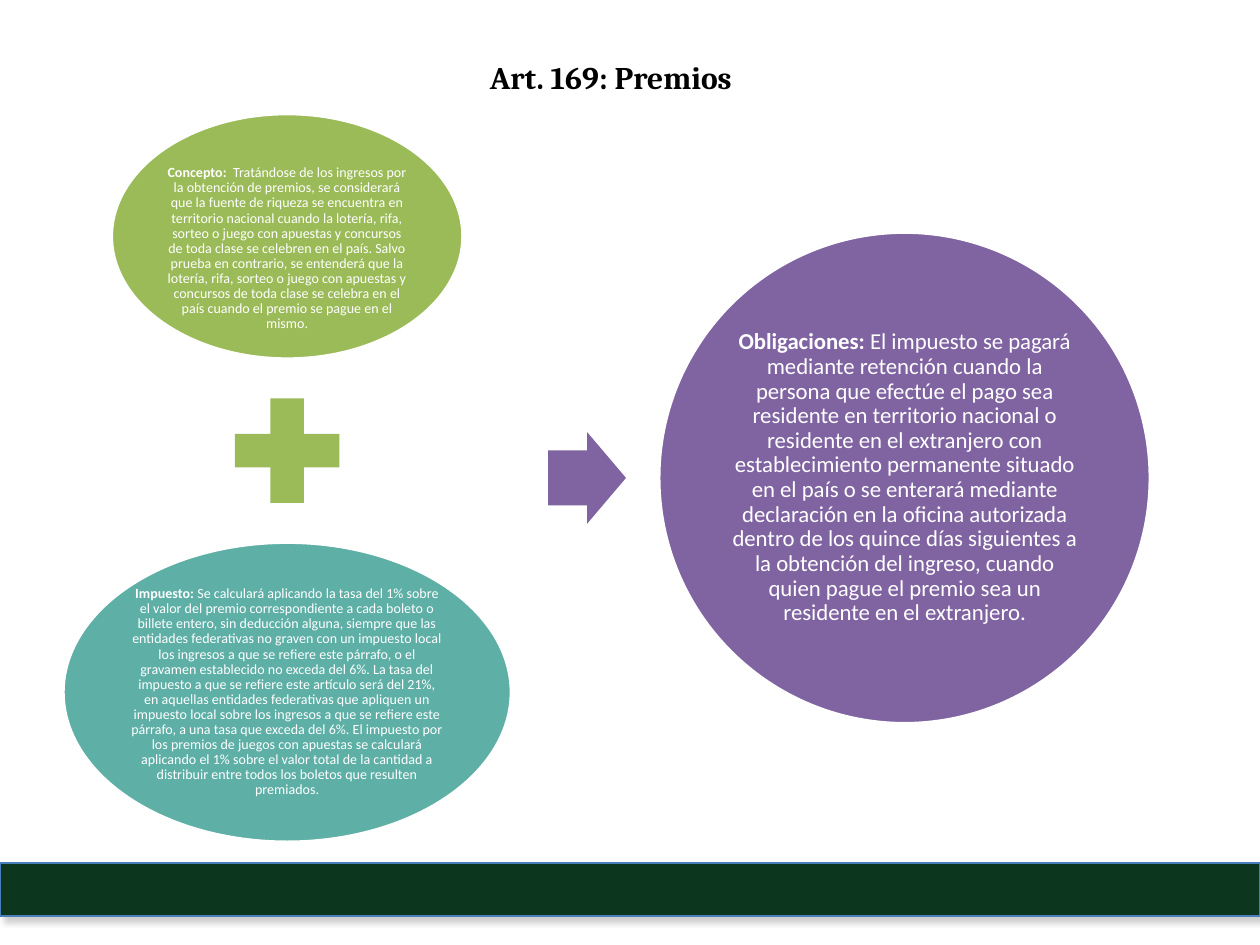
"""Build the slide on the taxation of prizes: two concepts added up lead to the obligations."""
from lxml import etree
from pptx import Presentation
from pptx.dml.color import RGBColor
from pptx.enum.shapes import MSO_SHAPE
from pptx.enum.text import MSO_ANCHOR, PP_ALIGN
from pptx.oxml.ns import qn
from pptx.util import Cm, Pt

OVAL, PLUS = MSO_SHAPE.OVAL, MSO_SHAPE.MATH_PLUS
ARROW, RECTANGLE = MSO_SHAPE.RIGHT_ARROW, MSO_SHAPE.RECTANGLE
MIDDLE, CENTER = MSO_ANCHOR.MIDDLE, PP_ALIGN.CENTER

COLORS = {"green": "9BBB59", "teal": "5EAFA6", "purple": "8064A2", "forest": "0C361D",
          "blue": "4A7EBB", "gray": "808080", "white": "FFFFFF", "black": "000000"}

TITLE = "Art. 169: Premios"
CONCEPT = ("Concepto: ", "\N{NO-BREAK SPACE}Tratándose de los ingresos por la obtención de premios, se "
           "considerará que la fuente de riqueza se encuentra en territorio nacional cuando la lotería, "
           "rifa, sorteo o juego con apuestas y concursos de toda clase se celebren en el país. Salvo "
           "prueba en contrario, se entenderá que la lotería, rifa, sorteo o juego con apuestas y "
           "concursos de toda clase se celebra en el país cuando el premio se pague en el mismo.")
TAX = ("Impuesto: ", "Se calculará aplicando la tasa del 1% sobre el valor del premio correspondiente a "
       "cada boleto o billete entero, sin deducción alguna, siempre que las entidades federativas no "
       "graven con un impuesto local los ingresos a que se refiere este párrafo, o el gravamen "
       "establecido no exceda del 6%. La tasa del impuesto a que se refiere este artículo será del 21%, "
       "en aquellas entidades federativas que apliquen un impuesto local sobre los ingresos a que se "
       "refiere este párrafo, a una tasa que exceda del 6%. El impuesto por los premios de juegos con "
       "apuestas se calculará aplicando el 1% sobre el valor total de la cantidad a distribuir entre "
       "todos los boletos que resulten premiados.")
DUTIES = ("Obligaciones: ", "El impuesto se pagará mediante retención cuando la persona que efectúe el "
          "pago sea residente en territorio nacional o residente en el extranjero con establecimiento "
          "permanente situado en el país o se enterará mediante declaración en la oficina autorizada "
          "dentro de los quince días siguientes a la obtención del ingreso, cuando quien pague el premio "
          "sea un residente en el extranjero.")

STACK = [
    {"kind": OVAL, "color": "green", "size": (7.09, 4.95), "text": CONCEPT, "points": 8, "top_inset": 0.53},
    {"kind": PLUS, "color": "green", "size": (2.87, 2.87)},
    {"kind": OVAL, "color": "teal", "size": (9.04, 6.05), "text": TAX, "points": 8},
]
ROW = [
    (11.05, {"kind": ARROW, "color": "purple", "size": (1.57, 1.85), "adjust": (0.6, 0.5)}),
    (13.28, {"kind": OVAL, "color": "purple", "size": (9.91, 9.91), "text": DUTIES, "points": 13}),
]
STACK_TOP, STACK_CENTER, STACK_GAP = 2.29, 5.79, 0.41


def rgb(name):
    return RGBColor.from_string(COLORS[name])


def add_filled(page, kind, left, top, width, height, color):
    shape = page.shapes.add_shape(kind, Cm(left), Cm(top), Cm(width), Cm(height))
    shape.shadow.inherit = False
    shape.fill.solid()
    shape.fill.fore_color.rgb = rgb(color)
    shape.line.fill.background()
    return shape


def set_line(shape, color, points):
    shape.line.color.rgb = rgb(color)
    shape.line.width = Pt(points)


def set_font(para, name, points, color):
    para.alignment = CENTER
    para.font.name, para.font.size = name, Pt(points)
    para.font.color.rgb = rgb(color)


def add_part(page, part, left, top):
    shape = add_filled(page, part["kind"], left, top, *part["size"], part["color"])
    for index, value in enumerate(part.get("adjust", ())):
        shape.adjustments[index] = value
    if "text" not in part:
        return
    set_line(shape, "white", 2)
    frame = shape.text_frame
    frame.word_wrap, frame.vertical_anchor = True, MIDDLE
    frame.margin_left = frame.margin_right = frame.margin_bottom = Cm(0.03)
    frame.margin_top = Cm(part.get("top_inset", 0.03))
    para = frame.paragraphs[0]
    para.line_spacing = 0.9
    set_font(para, "Calibri", part["points"], "white")
    for words, bold in zip(part["text"], (True, False)):
        span = para.add_run()
        span.text, span.font.bold = words, bold


def add_footer(page):
    bar = add_filled(page, RECTANGLE, 0, 17.4, 25.4, 1.07, "forest")
    set_line(bar, "blue", 0.75)
    effects = bar._element.spPr.find(qn("a:effectLst"))
    shadow = etree.SubElement(effects, qn("a:outerShdw"), blurRad=str(Pt(4)), dist=str(Pt(3)),
                              dir=str(45 * 60000), rotWithShape="0")
    tint = etree.SubElement(shadow, qn("a:srgbClr"), val=COLORS["gray"])
    etree.SubElement(tint, qn("a:alpha"), val="40000")


def add_title(page):
    box = page.shapes.add_textbox(Cm(0.91), Cm(1.04), Cm(22.81), Cm(1.02))
    box.text_frame.word_wrap = True
    para = box.text_frame.paragraphs[0]
    para.text = TITLE
    set_font(para, "Cambria", 18, "black")
    para.font.bold = True


def main():
    deck = Presentation()
    deck.slide_width, deck.slide_height = Cm(25.4), Cm(19.05)
    page = deck.slides.add_slide(deck.slide_layouts[6])
    add_footer(page)
    top = STACK_TOP
    for part in STACK:
        width, height = part["size"]
        add_part(page, part, STACK_CENTER - width / 2, top)
        top += height + STACK_GAP
    middle = (STACK_TOP + top - STACK_GAP) / 2
    for left, part in ROW:
        add_part(page, part, left, middle - part["size"][1] / 2)
    add_title(page)
    deck.save("out.pptx")


if __name__ == "__main__":
    main()
